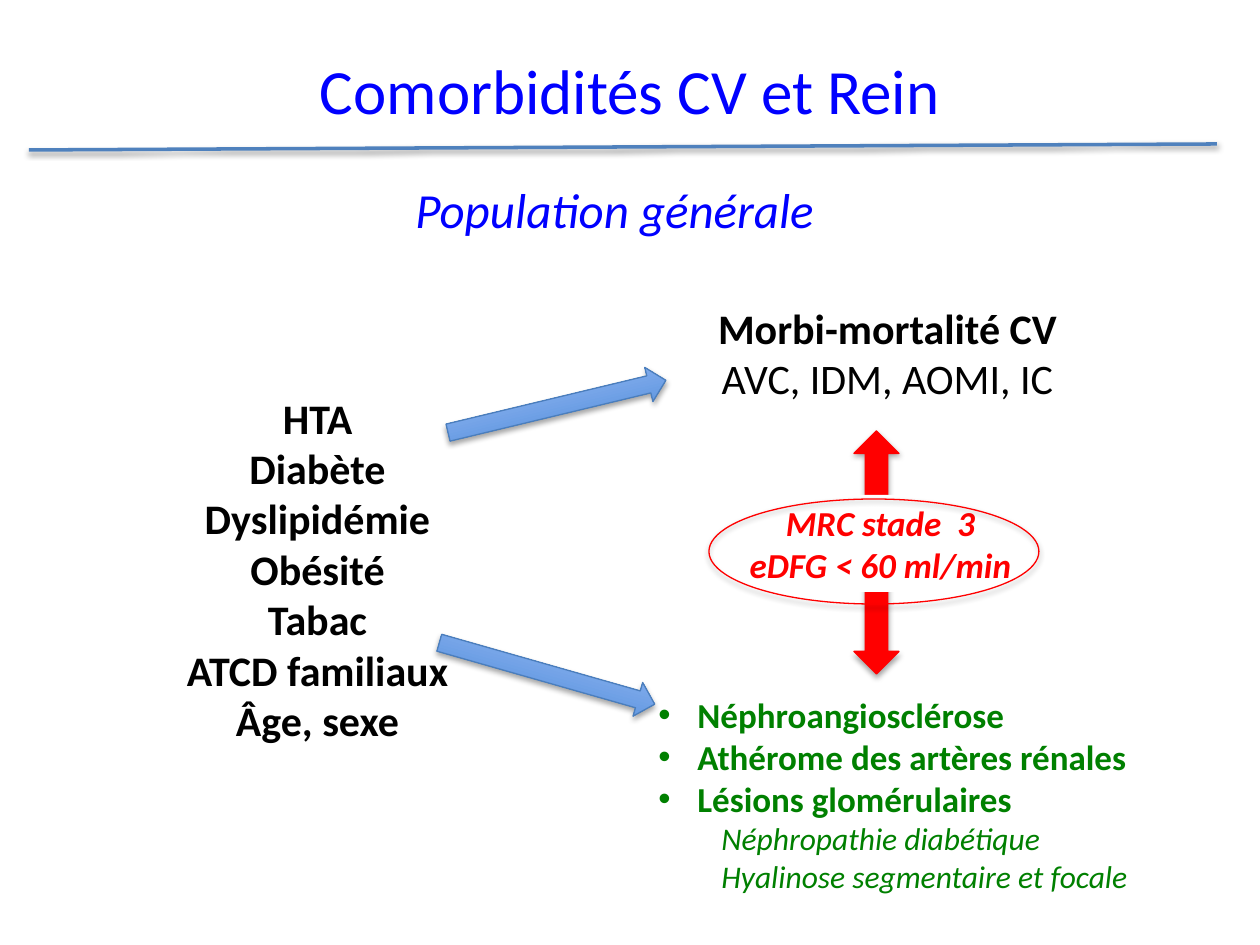
from lxml import etree
from pptx import Presentation
from pptx import util as u
from pptx.dml.color import RGBColor
from pptx.enum import shapes, text
from pptx.oxml import ns

PX = 914400 // 126
COLORS = {
    "blue": "0000FF", "black": "000000", "green": "008000", "red": "FF0000",
    "white": "FFFFFF", "rule": "4F81BD", "arrow_edge": "4B7EBC",
    "arrow_dark": "3F80CE", "arrow_light": "A4C4FF",
}
RISK_FACTORS = ["HTA", "Diabète", "Dyslipidémie", "Obésité", "Tabac",
                "ATCD familiaux", "Âge, sexe"]
RENAL_LESIONS = ["Néphroangiosclérose", "Athérome des artères rénales",
                 "Lésions glomérulaires"]
GLOMERULAR_TYPES = ["Néphropathie diabétique", "Hyalinose segmentaire et focale"]


def px(*values):
    """Turn whole pixels into EMU lengths."""
    return [u.Emu(value * PX) for value in values]


def rgb(name):
    """Look up a named colour."""
    return RGBColor.from_string(COLORS[name])


def add_shadow(shape, opacity=35):
    """Give a shape or connector a soft shadow straight below."""
    effects = etree.SubElement(shape._element.spPr, ns.qn("a:effectLst"))
    shadow = etree.SubElement(effects, ns.qn("a:outerShdw"), blurRad="40000",
                              dist="23000", dir="5400000", rotWithShape="0")
    color = etree.SubElement(shadow, ns.qn("a:srgbClr"), val=COLORS["black"])
    etree.SubElement(color, ns.qn("a:alpha"), val=str(opacity * 1000))


def add_figure(slide, kind, box, edge):
    """Add an outlined preset shape with no fill."""
    shape = slide.shapes.add_shape(kind, *px(*box))
    shape.fill.background()
    shape.line.color.rgb = rgb(edge)
    shape.line.width = u.Pt(0.75)
    add_shadow(shape)
    return shape


def add_block_arrow(slide, box, rotation):
    """Add a rotated right arrow with a blue gradient."""
    arrow = add_figure(slide, shapes.MSO_SHAPE.RIGHT_ARROW, box, "arrow_edge")
    arrow.rotation = rotation
    arrow.fill.gradient()
    arrow.fill.gradient_angle = 90
    for stop, name in zip(arrow.fill.gradient_stops, ("arrow_dark", "arrow_light")):
        stop.color.rgb = rgb(name)


def add_rule(slide, start, end):
    """Add the line under the title."""
    rule = slide.shapes.add_connector(shapes.MSO_CONNECTOR.STRAIGHT, *px(*start, *end))
    rule.line.color.rgb = rgb("rule")
    rule.line.width = u.Pt(2)
    add_shadow(rule, 38)


def add_text(slide, box, lines, size, color, bold=False, italic=False,
             align=text.PP_ALIGN.CENTER, wrap=False):
    """Add a text box with one paragraph per line and return its frame."""
    shape = slide.shapes.add_textbox(*px(*box))
    frame = shape.text_frame
    frame.word_wrap = wrap
    frame.text = "\n".join(lines)
    for paragraph in frame.paragraphs:
        paragraph.alignment = align
        format_runs(paragraph, size, color, bold, italic)
    return shape


def format_runs(paragraph, size, color, bold=False, italic=False):
    """Set the font of every run in a paragraph."""
    for run in paragraph.runs:
        font = run.font
        font.name, font.size = "Calibri", u.Pt(size)
        font.bold, font.italic = bold, italic
        font.color.rgb = rgb(color)


def indent(paragraph, left, hanging=0, bullet=None):
    """Indent a paragraph, with an optional hanging bullet."""
    properties = paragraph._p.get_or_add_pPr()
    properties.set("marL", str(left * PX))
    properties.set("indent", str(-hanging * PX))
    if bullet:
        etree.SubElement(properties, ns.qn("a:buFont"), typeface="Arial")
        etree.SubElement(properties, ns.qn("a:buChar"), char=bullet)


def add_lesions(slide, box):
    """Add the bulleted renal lesions and their indented subtypes."""
    shape = add_text(slide, box, RENAL_LESIONS + GLOMERULAR_TYPES, 20, "green",
                     bold=True, align=text.PP_ALIGN.LEFT)
    paragraphs = shape.text_frame.paragraphs
    count = len(RENAL_LESIONS)
    for paragraph in paragraphs[:count]:
        indent(paragraph, 39, 39, "•")
    for paragraph in paragraphs[count:]:
        indent(paragraph, 63)
        format_runs(paragraph, 18, "green", italic=True)


def main():
    """Build and save the slide."""
    presentation = Presentation()
    presentation.slide_width, presentation.slide_height = px(1260, 945)
    slide = presentation.slides.add_slide(presentation.slide_layouts[6])

    double_arrow = add_figure(slide, shapes.MSO_SHAPE.UP_DOWN_ARROW,
                              (854, 431, 45, 243), "red")
    double_arrow.fill.solid()
    double_arrow.fill.fore_color.rgb = rgb("red")

    title = add_text(slide, (63, 38, 1134, 157), ["Comorbidités CV et Rein"],
                     36, "blue", wrap=True)
    title.text_frame.margin_top = px(14)[0]
    add_text(slide, (170, 386, 295, 369), RISK_FACTORS, 24, "black", bold=True)
    add_block_arrow(slide, (445, 389, 224, 35), 346.5)
    add_lesions(slide, (646, 687, 509, 217))
    add_block_arrow(slide, (435, 656, 224, 35), 15.9)

    outcome = add_text(slide, (646, 296, 483, 115),
                       ["Morbi-mortalité CV", "AVC, IDM, AOMI, IC"],
                       24, "black", bold=True, wrap=True)
    format_runs(outcome.text_frame.paragraphs[1], 24, "black")

    stage = add_text(slide, (732, 495, 297, 97), ["MRC stade  3", "eDFG < 60 ml/min"],
                     20, "red", bold=True, italic=True)
    stage.fill.solid()
    stage.fill.fore_color.rgb = rgb("white")

    add_rule(slide, (29, 150), (1217, 144))
    add_figure(slide, shapes.MSO_SHAPE.OVAL, (709, 499, 330, 105), "red")
    add_text(slide, (403, 173, 454, 72), ["Population générale"], 28, "blue",
             italic=True, align=text.PP_ALIGN.LEFT)
    presentation.save("out.pptx")


if __name__ == "__main__":
    main()
